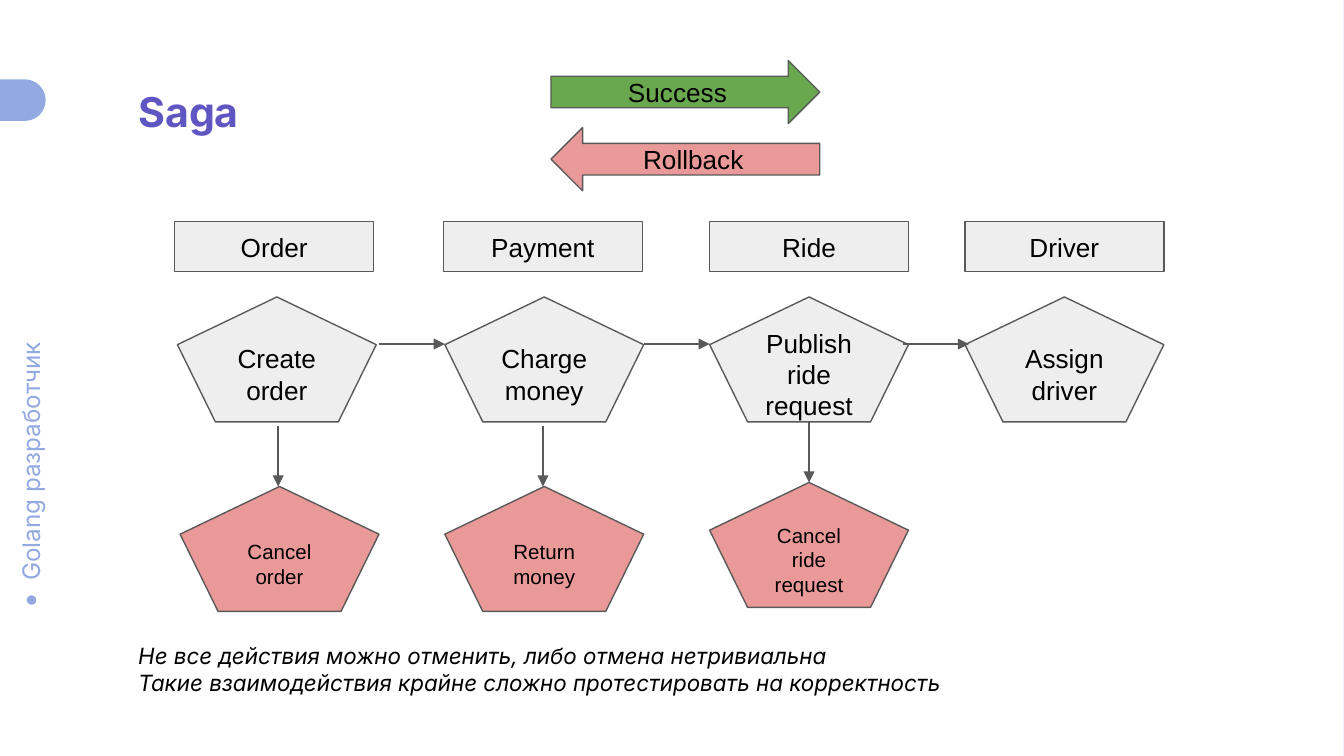
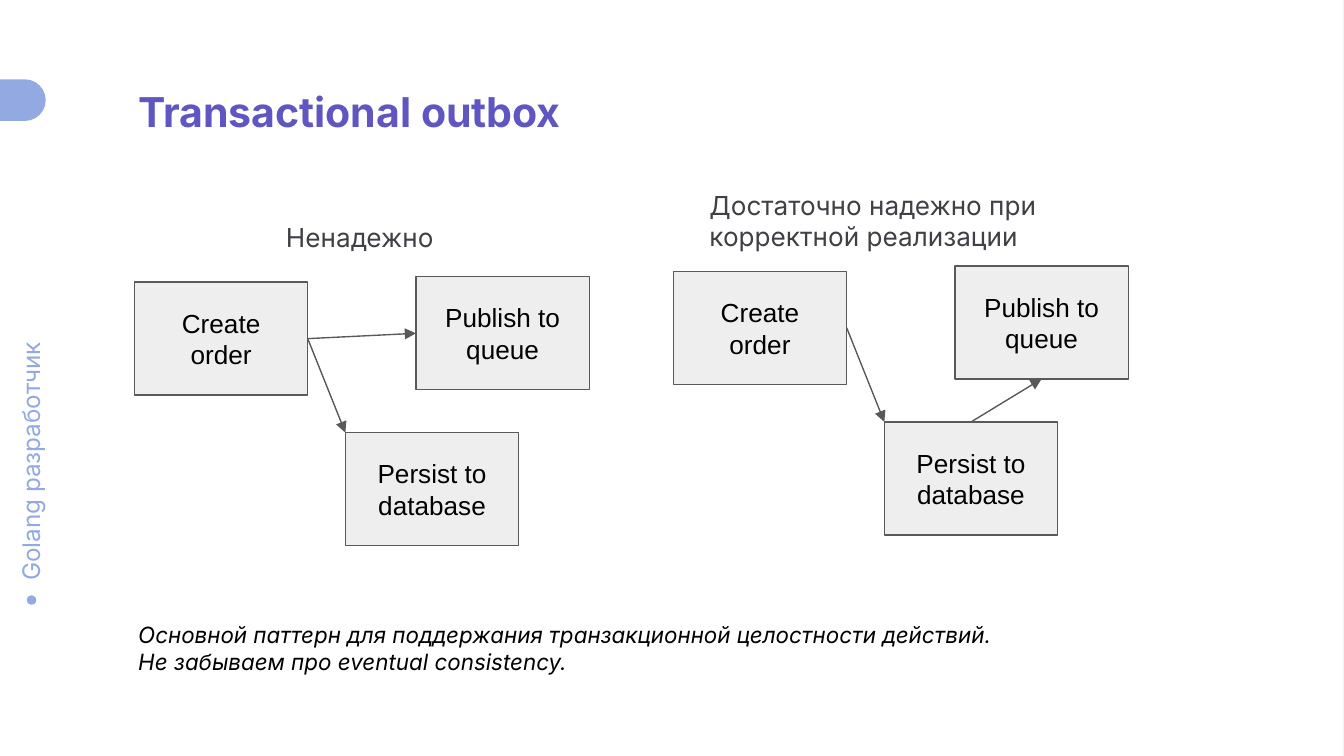
from dataclasses import dataclass, field
from typing import NamedTuple, Optional

import pptx
import pptx.dml.color
import pptx.enum.shapes
import pptx.enum.text
import pptx.oxml
import pptx.oxml.ns
import pptx.presentation
import pptx.shapes.autoshape
import pptx.slide
import pptx.text.text
import pptx.util

SHAPE = pptx.enum.shapes.MSO_SHAPE
ALIGN = pptx.enum.text.PP_ALIGN
ANCHOR = pptx.enum.text.MSO_ANCHOR

# The slide is a grid of 100 columns by 56.25 rows of square cells.
COLUMNS, ROWS = 100, 56.25
CELL = pptx.util.Inches(0.1)


class Style(NamedTuple):
    font: str
    size: int
    color: str
    bold: bool = False
    italic: bool = False


@dataclass(frozen=True)
class Theme:
    backdrop: str = "F1F4FF"
    page: str = "FFFFFF"
    accent: str = "92A9E2"
    neutral: str = "EEEEEE"
    success: str = "6AA84F"
    rollback: str = "EA9999"
    outline: str = "595959"
    outline_width: float = 0.75
    title: Style = Style("Inter", 22, "6056C2", bold=True)
    side: Style = Style("Inter", 13, "92A9E2")
    note: Style = Style("Inter", 12, "000000", italic=True)
    caption: Style = Style("Inter", 14, "414046")
    node: Style = Style("Arial", 14, "000000")
    undo: Style = Style("Arial", 11, "000000")


THEME = Theme()


class Point(NamedTuple):
    col: float
    row: float


class Box(NamedTuple):
    """A rectangle in grid cells."""
    col: float
    row: float
    cols: float
    rows: float

    def at(self, across: float, down: float) -> Point:
        """The point at the given shares of the width and height."""
        return Point(self.col + across * self.cols, self.row + down * self.rows)


class Step(NamedTuple):
    """One column of the saga: service, action and its compensation."""
    service: str
    service_col: float
    action: str
    action_col: float
    next_col: Optional[float] = None
    undo: str = ""
    undo_col: float = 0
    undo_row: float = 0
    drop_col: float = 0


class Caption(NamedTuple):
    text: str
    box: Box


@dataclass(frozen=True)
class Diagram:
    """An order flow placed at its top left corner."""
    corner: Point
    caption: Caption
    publish_after_persist: bool
    node_size: Point = field(default=Point(12.9, 8.4))

    def node(self, col: float, row: float) -> Box:
        return Box(self.corner.col + col, self.corner.row + row, *self.node_size)


STEPS = [
    Step("Order", 13, "Create order", 13.2, 28.2, "Cancel order", 13.4, 36.2, 20.7),
    Step("Payment", 33, "Charge money", 33.1, 47.9, "Return money", 33.1, 36.2, 40.4),
    Step("Ride", 52.8, "Publish ride request", 52.8, 67.2,
         "Cancel ride request", 52.8, 35.9, 60.2),
    Step("Driver", 71.8, "Assign driver", 71.8),
]
DIAGRAMS = [
    Diagram(Point(10, 21), Caption("Ненадежно", Box(20.3, 15.5, 14.3, 4.4)), False),
    Diagram(Point(50.1, 20.2),
            Caption("Достаточно надежно при корректной реализации",
                    Box(51.8, 13.1, 33.8, 6.7)), True),
]
SAGA_NOTES = [
    "Не все действия можно отменить, либо отмена нетривиальна",
    "Такие взаимодействия крайне сложно протестировать на корректность",
]
OUTBOX_NOTES = [
    "Основной паттерн для поддержания транзакционной целостности действий.",
    "Не забываем про eventual consistency.",
]


def cells(*values: float) -> list[int]:
    """Grid cells to EMU."""
    return [round(v * CELL) for v in values]


def rgb(color: str) -> pptx.dml.color.RGBColor:
    return pptx.dml.color.RGBColor.from_string(color)


def write(tf: pptx.text.text.TextFrame, text: str, style: Style,
          align: ALIGN = ALIGN.LEFT, anchor: ANCHOR = ANCHOR.TOP,
          inset_rows: float = 1) -> None:
    tf.text = text
    tf.word_wrap = True
    tf.auto_size = pptx.enum.text.MSO_AUTO_SIZE.NONE
    tf.vertical_anchor = anchor
    tf.margin_left = tf.margin_right = CELL
    tf.margin_top = tf.margin_bottom = round(inset_rows * CELL)
    for p in tf.paragraphs:
        p.alignment = align
        for r in p.runs:
            r.font.name, r.font.size = style.font, pptx.util.Pt(style.size)
            r.font.bold, r.font.italic = style.bold, style.italic
            r.font.color.rgb = rgb(style.color)


def add_text(s: pptx.slide.Slide, text: str, box: Box,
             style: Style) -> pptx.shapes.autoshape.Shape:
    sp = s.shapes.add_textbox(*cells(*box))
    write(sp.text_frame, text, style)
    return sp


def add_plain(s: pptx.slide.Slide, kind: SHAPE, box: Box,
              fill: str) -> pptx.shapes.autoshape.Shape:
    """Add a filled shape without outline or shadow."""
    sp = s.shapes.add_shape(kind, *cells(*box))
    sp.shadow.inherit = False
    sp.fill.solid()
    sp.fill.fore_color.rgb = rgb(fill)
    sp.line.fill.background()
    return sp


def add_node(s: pptx.slide.Slide, kind: SHAPE, text: str, box: Box,
             fill: str = THEME.neutral, style: Style = THEME.node) -> None:
    """Add an outlined shape with a centred label."""
    sp = add_plain(s, kind, box, fill)
    sp.line.color.rgb = rgb(THEME.outline)
    sp.line.width = pptx.util.Pt(THEME.outline_width)
    write(sp.text_frame, text, style, ALIGN.CENTER, ANCHOR.MIDDLE)


def add_arrow(s: pptx.slide.Slide, start: Point, end: Point) -> None:
    line = s.shapes.add_connector(pptx.enum.shapes.MSO_CONNECTOR.STRAIGHT,
                                  *cells(*start, *end))
    line.line.color.rgb = rgb(THEME.outline)
    line.line.width = pptx.util.Pt(THEME.outline_width)
    props = line.element.spPr
    head = pptx.oxml.ns.qn("a:tailEnd")
    outline = props.find(pptx.oxml.ns.qn("a:ln"))
    outline.append(outline.makeelement(head, {"type": "triangle"}))
    props.append(props.makeelement(pptx.oxml.ns.qn("a:effectLst"), {}))


def clear_layout(layout: pptx.slide.SlideLayout) -> None:
    """Keep only the title placeholder and set the backdrop."""
    for ph in list(layout.placeholders):
        if ph.placeholder_format.type != pptx.enum.shapes.PP_PLACEHOLDER.TITLE:
            ph.element.getparent().remove(ph.element)
    layout.background.fill.solid()
    layout.background.fill.fore_color.rgb = rgb(THEME.backdrop)


def frame_layout(s: pptx.slide.Slide) -> None:
    """Draw the page, side label and tab, then hand them to the layout."""
    page = add_plain(s, SHAPE.RECTANGLE, Box(-0.1, 0, COLUMNS, ROWS), THEME.page)
    side = add_text(s, "Golang разработчик", Box(-7.7, 32.1, 20, 4.2), THEME.side)
    side.rotation = 270
    dot = add_plain(s, SHAPE.OVAL, Box(2, 44.3, 0.7, 0.7), THEME.accent)
    tab = add_plain(s, SHAPE.ROUNDED_RECTANGLE, Box(-3.8, 5.9, 7.2, 3.1), THEME.accent)
    tab.adjustments[0] = 0.5
    for sp in (page, side, dot, tab):
        s.slide_layout.shapes.element.append(sp.element)


def add_heading(s: pptx.slide.Slide, title: str, notes: list[str],
                notes_row: float) -> None:
    sp = s.shapes.title
    sp.left, sp.top, sp.width, sp.height = cells(9.3, 5.9, 61.2, 4.7)
    write(sp.text_frame, title, THEME.title, inset_rows=0.5)
    add_text(s, "\n".join(notes), Box(9.3, notes_row, 84.5, 6.1), THEME.note)


def build_saga(s: pptx.slide.Slide) -> None:
    add_heading(s, "Saga", SAGA_NOTES, 46.8)
    add_node(s, SHAPE.RIGHT_ARROW, "Success", Box(41, 4.5, 20, 4.7), THEME.success)
    add_node(s, SHAPE.LEFT_ARROW, "Rollback", Box(41, 9.5, 20, 4.7), THEME.rollback)
    width, height, arrow_row = 14.8, 9.3, 25.6
    for step in STEPS:
        add_node(s, SHAPE.RECTANGLE, step.service,
                 Box(step.service_col, 16.5, width, 3.7))
        add_node(s, SHAPE.REGULAR_PENTAGON, step.action,
                 Box(step.action_col, 22.1, width, height))
        if step.undo:
            add_node(s, SHAPE.REGULAR_PENTAGON, step.undo,
                     Box(step.undo_col, step.undo_row, width, height),
                     THEME.rollback, THEME.undo)
            add_arrow(s, Point(step.drop_col, step.undo_row - 4.5),
                      Point(step.drop_col, step.undo_row))
    for step in STEPS:
        if step.next_col is not None:
            add_arrow(s, Point(step.next_col, arrow_row),
                      Point(step.next_col + 4.9, arrow_row))


def build_outbox(s: pptx.slide.Slide) -> None:
    add_heading(s, "Transactional outbox", OUTBOX_NOTES, 45.2)
    for diagram in DIAGRAMS:
        create = diagram.node(0, 0)
        persist = diagram.node(15.7, 11.2)
        publish = diagram.node(20.95, -0.4)
        add_node(s, SHAPE.RECTANGLE, "Create order", create)
        add_node(s, SHAPE.RECTANGLE, "Persist to database", persist)
        add_node(s, SHAPE.RECTANGLE, "Publish to queue", publish)
        add_arrow(s, create.at(1, 0.5), persist.at(0, 0))
        if diagram.publish_after_persist:
            add_arrow(s, persist.at(0.5, 0), publish.at(0.5, 1))
        else:
            add_arrow(s, create.at(1, 0.5), publish.at(0, 0.5))
        add_text(s, diagram.caption.text, diagram.caption.box, THEME.caption)


def main() -> None:
    prs = pptx.Presentation()
    prs.slide_width, prs.slide_height = cells(COLUMNS, ROWS)
    layout = prs.slide_layouts.get_by_name("Title Only")
    clear_layout(layout)
    saga = prs.slides.add_slide(layout)
    frame_layout(saga)
    build_saga(saga)
    build_outbox(prs.slides.add_slide(layout))
    prs.save("out.pptx")


if __name__ == "__main__":
    main()
